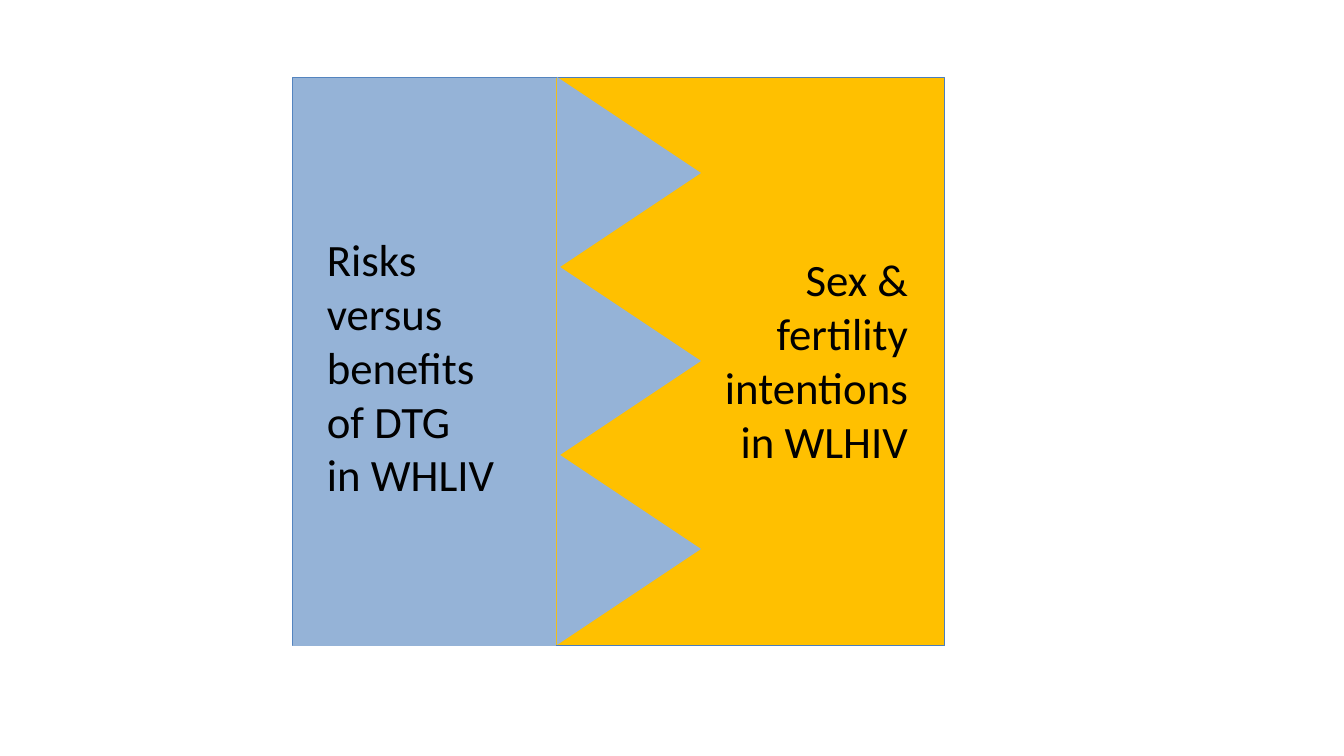
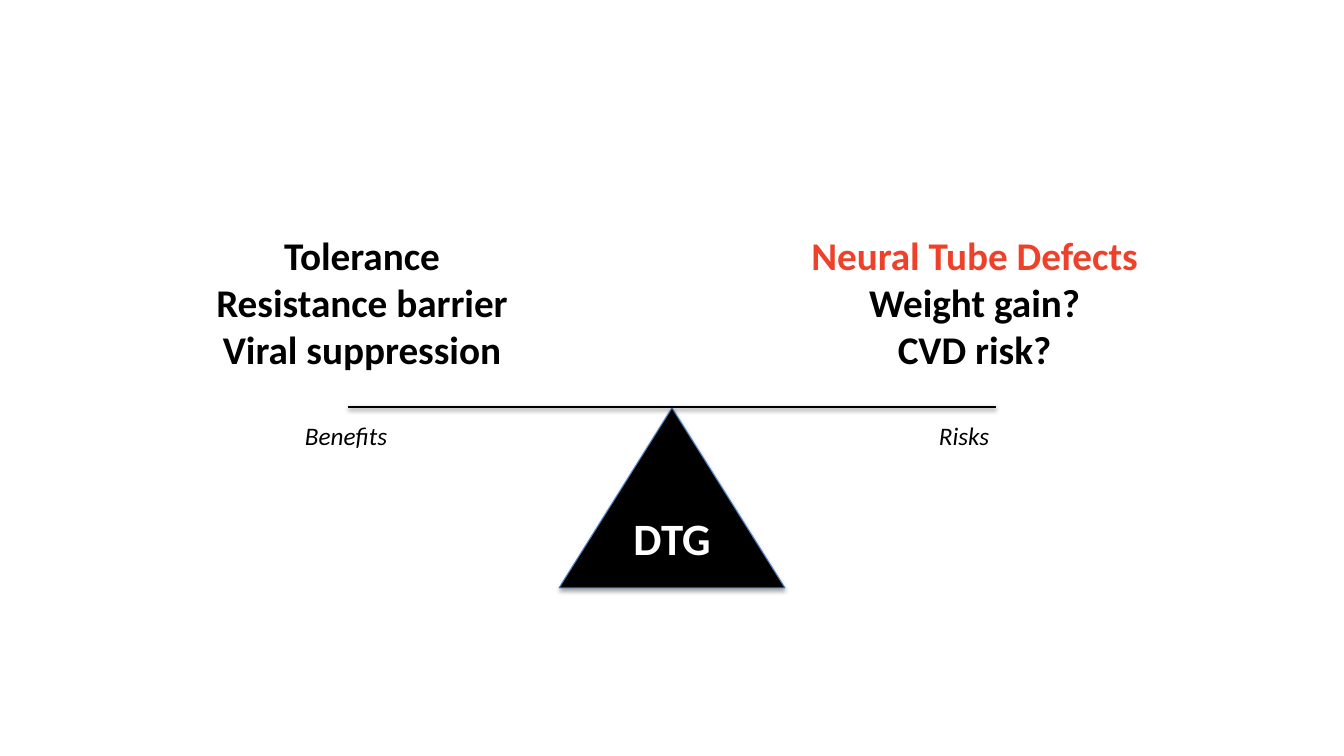
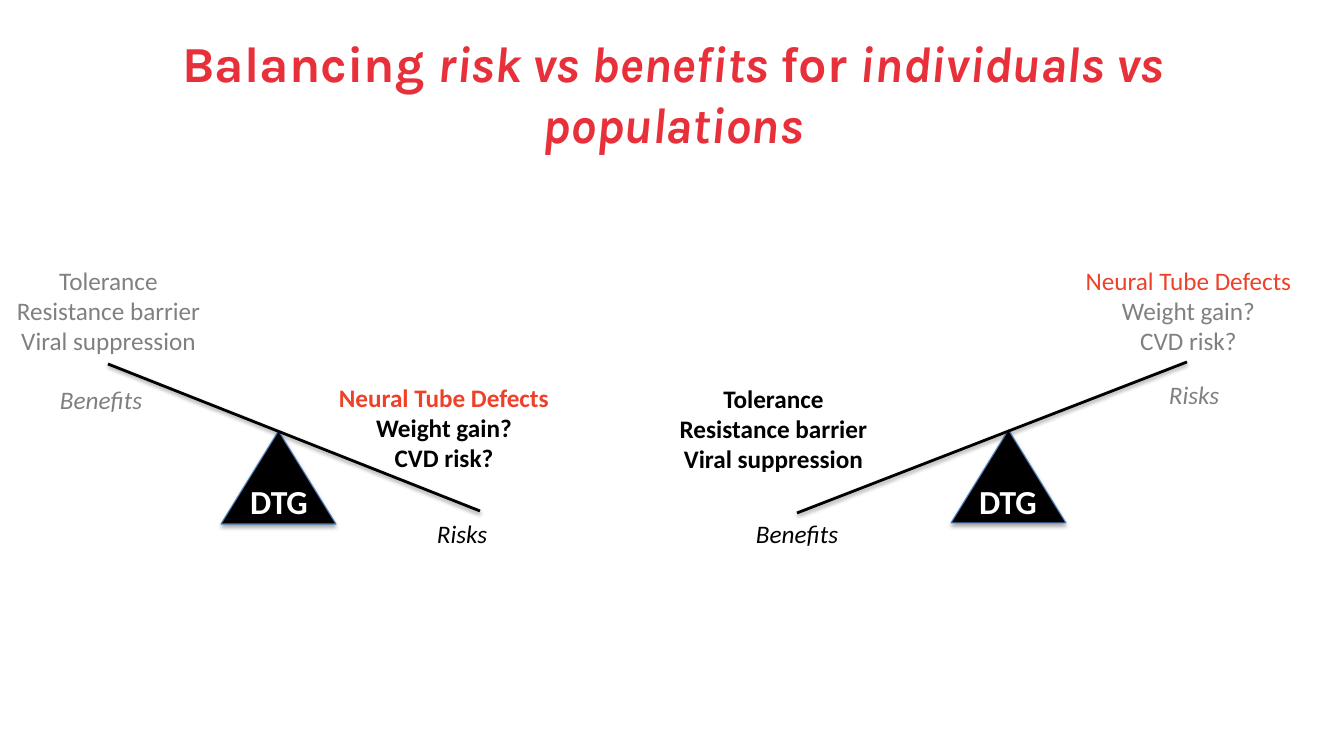
"""Build three slides on weighing the risks and benefits of DTG."""
import pptx
import pptx.util
import pptx.dml.color
import pptx.enum.shapes
import pptx.enum.text
import pptx.oxml.ns
import lxml.etree

PX = 914400 / 100.8
FONT = "Calibri"
COLOURS = {
    "black": "000000", "white": "FFFFFF", "grey": "808080", "blue": "95B3D7",
    "amber": "FFC000", "outline": "4B7EBC", "alert": "EF4129", "title": "E8303B",
}
RGB = {name: pptx.dml.color.RGBColor.from_string(value) for name, value in COLOURS.items()}
ALIGN = pptx.enum.text.PP_ALIGN
SHAPES = pptx.enum.shapes.MSO_SHAPE


def add_text(page, place, lines, size, colour="black", bold=False, italic=False,
             align=ALIGN.LEFT, wrap=False):
    box = page.shapes.add_textbox(*[round(length * PX) for length in place])
    box.text_frame.word_wrap = wrap
    box.text_frame.auto_size = pptx.enum.text.MSO_AUTO_SIZE.SHAPE_TO_FIT_TEXT
    box.text_frame.text = "\n".join(lines)
    for para in box.text_frame.paragraphs:
        para.alignment = align
        for span in para.runs:
            span.font.name = FONT
            span.font.size = pptx.util.Pt(size)
            span.font.bold = bold
            span.font.italic = italic
            span.font.color.rgb = RGB[colour]
    return box


def cast_shadow(shape, opacity, distance):
    qn = pptx.oxml.ns.qn
    effects = lxml.etree.SubElement(shape._element.spPr, qn("a:effectLst"))
    shadow = lxml.etree.SubElement(
        effects, qn("a:outerShdw"), blurRad=str(pptx.util.Pt(3.1)),
        dist=str(pptx.util.Pt(distance)), dir="5400000", rotWithShape="0")
    tint = lxml.etree.SubElement(shadow, qn("a:srgbClr"), val=COLOURS["black"])
    lxml.etree.SubElement(tint, qn("a:alpha"), val=str(opacity * 1000))


deck = pptx.Presentation()
deck.slide_width = round(1344 * PX)
deck.slide_height = round(756 * PX)
interlock, balance, comparison = [deck.slides.add_slide(deck.slide_layouts[6]) for _ in range(3)]

panels = [(SHAPES.RECTANGLE, (293, 78, 652, 568), "amber")]
panels += [(SHAPES.ISOSCELES_TRIANGLE, (533, 101 + 188 * row, 192, 144), "blue") for row in range(3)]
panels += [(SHAPES.RECTANGLE, (293, 78, 263, 568), "blue")]
for kind, place, colour in panels:
    panel = interlock.shapes.add_shape(kind, *[round(length * PX) for length in place])
    panel.shadow.inherit = False
    panel.fill.solid()
    panel.fill.fore_color.rgb = RGB[colour]
    if kind == SHAPES.ISOSCELES_TRIANGLE:
        panel.rotation = 90
    if colour == "amber":
        panel.line.color.rgb = RGB["outline"]
        panel.line.width = pptx.util.Pt(0.75)
    else:
        panel.line.fill.background()

add_text(interlock, (317, 227, 272, 281), ["Risks", "versus benefits", "of DTG", "in WHLIV"],
         32, wrap=True)
add_text(interlock, (674, 247, 244, 228), ["Sex & fertility", "intentions in WLHIV"],
         32, align=ALIGN.RIGHT, wrap=True)

title = comparison.shapes.add_textbox(*[round(length * PX) for length in (68, 30, 1210, 126)])
title.text_frame.word_wrap = True
title.text_frame.vertical_anchor = pptx.enum.text.MSO_ANCHOR.MIDDLE
heading = title.text_frame.paragraphs[0]
heading.alignment = ALIGN.CENTER
for words, italic in [("Balancing ", False), ("risk vs benefits ", True),
                      ("for ", False), ("individuals vs populations", True)]:
    span = heading.add_run()
    span.text = words
    span.font.name = "Karla"
    span.font.size = pptx.util.Pt(36)
    span.font.bold = True
    span.font.italic = italic
    span.font.color.rgb = RGB["title"]

SIDES = [("Benefits", 104, ["Tolerance", "Resistance barrier", "Viral suppression"]),
         ("Risks", 71, ["Neural Tube Defects", "Weight gain?", "CVD risk?"])]
scales = [
    {"page": balance, "pivot": (559, 408, 226, 180), "beam": (348, 407, 996, 407),
     "name": (614, 506, 116, 65), "name_size": 32, "list_size": 28,
     "labels": [(295, 415), (929, 415)],
     "lists": [(204, 226, 316, 152), (799, 226, 351, 152)], "heavy": [True, True]},
    {"page": comparison, "pivot": (221, 431, 115, 93), "beam": (108, 364, 480, 511),
     "name": (221, 476, 116, 50), "name_size": 24, "list_size": 18,
     "labels": [(50, 379), (427, 513)],
     "lists": [(4, 260, 209, 102), (328, 377, 232, 102)], "heavy": [False, True]},
    {"page": comparison, "pivot": (951, 430, 115, 93), "beam": (797, 513, 1187, 362),
     "name": (950, 476, 116, 50), "name_size": 24, "list_size": 18,
     "labels": [(746, 513), (1159, 374)],
     "lists": [(669, 378, 209, 102), (1074, 260, 229, 102)], "heavy": [True, False]},
]
for scale in scales:
    page = scale["page"]
    pivot = page.shapes.add_shape(SHAPES.ISOSCELES_TRIANGLE,
                                  *[round(length * PX) for length in scale["pivot"]])
    pivot.fill.solid()
    pivot.fill.fore_color.rgb = RGB["black"]
    pivot.line.color.rgb = RGB["outline"]
    pivot.line.width = pptx.util.Pt(0.75)
    cast_shadow(pivot, 35, 1.8)

    beam = page.shapes.add_connector(pptx.enum.shapes.MSO_CONNECTOR.STRAIGHT,
                                     *[round(length * PX) for length in scale["beam"]])
    beam.line.color.rgb = RGB["black"]
    beam.line.width = pptx.util.Pt(2)
    cast_shadow(beam, 38, 1.6)

    for (label, width, items), corner, place, heavy in zip(
            SIDES, scale["labels"], scale["lists"], scale["heavy"]):
        colour = "black" if heavy else "grey"
        add_text(page, (*corner, width, 40), [label], 18, colour, italic=True)
        points = add_text(page, place, items, scale["list_size"], colour, bold=heavy,
                          align=ALIGN.CENTER)
        if label == "Risks":
            points.text_frame.paragraphs[0].runs[0].font.color.rgb = RGB["alert"]

    add_text(page, scale["name"], ["DTG"], scale["name_size"], "white", bold=True,
             align=ALIGN.CENTER, wrap=True)

deck.save("out.pptx")
